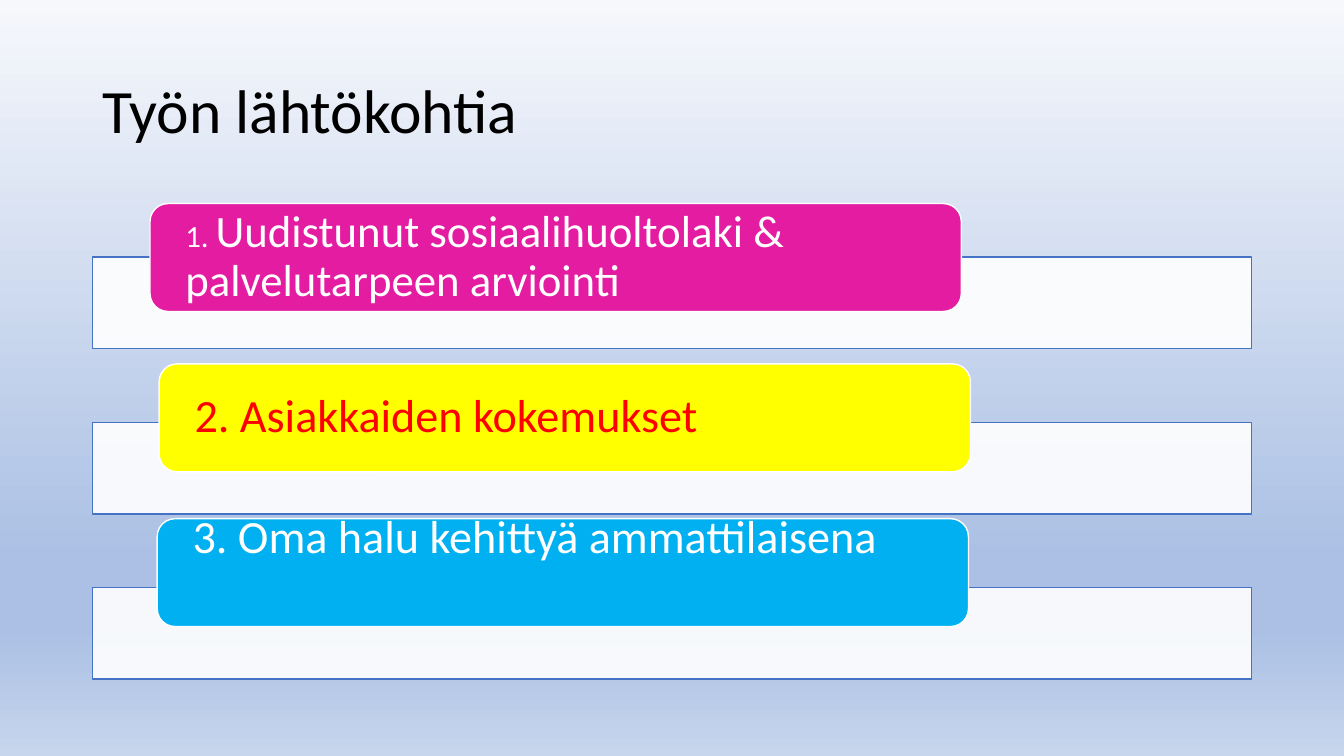
from dataclasses import dataclass

from lxml import etree
from pptx import Presentation
from pptx.dml.color import RGBColor
from pptx.enum.shapes import MSO_SHAPE
from pptx.enum.text import MSO_ANCHOR, PP_ALIGN
from pptx.oxml.ns import qn
from pptx.util import Cm, Pt

RECTANGLE = MSO_SHAPE.RECTANGLE
ROUNDED = MSO_SHAPE.ROUNDED_RECTANGLE
TOP, MIDDLE = MSO_ANCHOR.TOP, MSO_ANCHOR.MIDDLE
LEFT = PP_ALIGN.LEFT


@dataclass(frozen=True)
class Theme:
    """Colours, font and type sizes of the slide."""
    font: str = "Calibri"
    title_size: int = 44
    label_size: int = 33
    long_label_size: int = 32
    number_size: int = 22
    black: str = "000000"
    white: str = "FFFFFF"
    border: str = "4472C4"
    pink: str = "E41CA1"
    yellow: str = "FFFF00"
    red: str = "FF0000"
    blue: str = "00B0F0"
    background: tuple = ((0, "F6F8FC"), (74, "ABC0E4"), (83, "ABC0E4"), (100, "C7D5ED"))


THEME = Theme()


@dataclass(frozen=True)
class Label:
    """One coloured label, with its offset from the white bar behind it."""
    runs: tuple
    fill: str
    color: str
    left: float
    rise: float
    anchor: int = MIDDLE
    top_inset: float = 0


LABELS = (
    Label((("1. ", THEME.number_size),
           ("Uudistunut sosiaalihuoltolaki & palvelutarpeen arviointi", THEME.long_label_size)),
          THEME.pink, THEME.white, 1.45, 1.35),
    Label((("2. Asiakkaiden kokemukset", THEME.label_size),),
          THEME.yellow, THEME.red, 1.68, 1.47),
    Label((("3. Oma halu kehittyä ammattilaisena", THEME.label_size),),
          THEME.blue, THEME.white, 1.63, 1.73, TOP, -0.27),
)


def paint_background(slide):
    """Fill the slide with the vertical gradient."""
    fill = slide.background.fill
    fill.gradient()
    fill.gradient_angle = 270
    stops = slide.element.find(".//" + qn("a:gsLst"))
    for stop in list(stops):
        stops.remove(stop)
    for position, color in THEME.background:
        stop = etree.SubElement(stops, qn("a:gs"), pos=str(position * 1000))
        etree.SubElement(stop, qn("a:srgbClr"), val=color)


def write_text(shape, runs, color, anchor):
    """Write the runs as one left-aligned paragraph."""
    frame = shape.text_frame
    frame.word_wrap = True
    frame.vertical_anchor = anchor
    paragraph = frame.paragraphs[0]
    paragraph.alignment = LEFT
    paragraph.line_spacing = 0.9
    paragraph.font.name = THEME.font
    paragraph.font.color.rgb = RGBColor.from_string(color)
    for text, size in runs:
        run = paragraph.add_run()
        run.text = text
        run.font.size = Pt(size)


def add_panel(slide, kind, box, fill, line):
    """Add a filled and outlined shape in the box."""
    shape = slide.shapes.add_shape(kind, *map(Cm, box))
    shape.shadow.inherit = False
    shape.fill.solid()
    shape.fill.fore_color.rgb = RGBColor.from_string(fill)
    shape.line.color.rgb = RGBColor.from_string(line)
    shape.line.width = Pt(1)
    return shape


def add_title(slide, box):
    """Add the slide title in the box."""
    title = slide.shapes.add_textbox(*map(Cm, box))
    write_text(title, (("Työn lähtökohtia", THEME.title_size),), THEME.black, MIDDLE)


def add_label_row(slide, box, label):
    """Add a translucent white bar in the box and the label overlapping its top."""
    left, top, width, height = box
    bar = add_panel(slide, RECTANGLE, box, THEME.white, THEME.border)
    color = bar.fill._xPr.find(".//" + qn("a:srgbClr"))
    etree.SubElement(color, qn("a:alpha"), val="90000")

    label_box = (left + label.left, top - label.rise, width * 0.7, 2.72)
    shape = add_panel(slide, ROUNDED, label_box, label.fill, THEME.white)
    frame = shape.text_frame
    frame.margin_left = frame.margin_right = Cm(0.76)
    frame.margin_top = Cm(label.top_inset)
    frame.margin_bottom = 0
    write_text(shape, label.runs, label.color, label.anchor)


def add_label_list(slide, box, pitch, bar_height):
    """Stack the label rows from the top of the box at an equal pitch."""
    left, top, width = box
    for index, label in enumerate(LABELS):
        add_label_row(slide, (left, top + index * pitch, width, bar_height), label)


def main():
    """Build and save the presentation."""
    presentation = Presentation()
    presentation.slide_width = Cm(33.87)
    presentation.slide_height = Cm(19.05)
    slide = presentation.slides.add_slide(presentation.slide_layouts[6])
    paint_background(slide)
    add_title(slide, (2.33, 1.01, 29.21, 3.68))
    add_label_list(slide, (2.33, 6.48, 29.21), pitch=4.16, bar_height=2.31)
    presentation.save("out.pptx")


if __name__ == "__main__":
    main()
